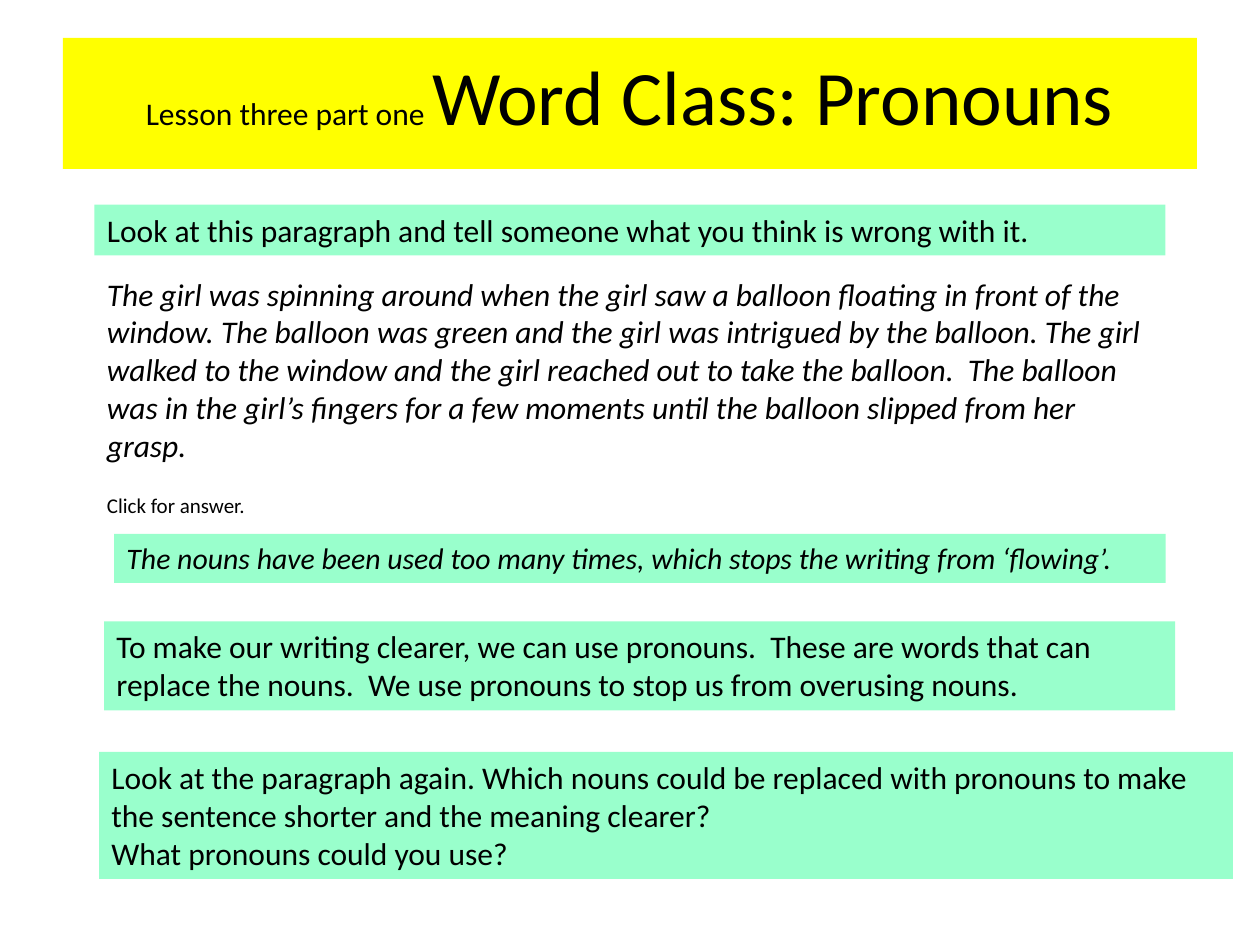
import pptx
import pptx.util
import pptx.dml.color
import pptx.enum.shapes
import pptx.enum.text
from dataclasses import dataclass

Pt = pptx.util.Pt
RGB = pptx.dml.color.RGBColor.from_string


@dataclass(frozen=True)
class Theme:
    font: str = "Calibri"
    ink: str = "000000"
    title: str = "FFFF00"
    mint: str = "99FFCC"
    head: int = 44
    body: int = 18
    note: int = 17
    small: int = 12


theme = Theme()
deck = pptx.Presentation()
deck.slide_width, deck.slide_height = Pt(720), Pt(540)
slide = deck.slides.add_slide(deck.slide_layouts[6])


def add_run(para, text, size, slant=False):
    run = para.add_run()
    run.text = text
    font = run.font
    font.name, font.size, font.italic = theme.font, Pt(size), slant
    font.color.rgb = RGB(theme.ink)


def add_box(place, fill=None):
    """Add a filled bar, or a plain text box when no fill is given."""
    place = [Pt(n) for n in place]
    if fill:
        kind = pptx.enum.shapes.MSO_SHAPE.RECTANGLE
        box = slide.shapes.add_shape(kind, *place)
        box.shadow.inherit = False
        box.fill.solid()
        box.fill.fore_color.rgb = RGB(fill)
        box.line.fill.background()
    else:
        box = slide.shapes.add_textbox(*place)
    frame = box.text_frame
    frame.word_wrap = True
    frame.vertical_anchor = pptx.enum.text.MSO_ANCHOR.TOP
    return frame


# Title bar
frame = add_box((36, 21.6, 648, 74.9), theme.title)
frame.margin_top = Pt(6)
para = frame.paragraphs[0]
para.alignment = pptx.enum.text.PP_ALIGN.CENTER
add_run(para, "Lesson three part one ", theme.body)
add_run(para, "Word Class: Pronouns", theme.head)

# Lesson steps: place, fill, size, italic, paragraphs
steps = [
    ((54, 277.9, 95, 21.6), None, theme.small, False,
     ["Click for answer."]),
    ((54, 116.9, 612, 29), theme.mint, theme.body, False,
     ["Look at this paragraph and tell someone what you think is wrong with it."]),
    ((54, 153.4, 612, 116.6), None, theme.body, True,
     ["The girl was spinning around when the girl saw a balloon floating in "
      "front of the window. The balloon was green and the girl was intrigued by "
      "the balloon. The girl walked to the window and the girl reached out to "
      "take the balloon.  The balloon was in the girl’s fingers for a few "
      "moments until the balloon slipped from her grasp."]),
    ((65.2, 305.1, 601, 28), theme.mint, theme.note, True,
     ["The nouns have been used too many times, which stops the writing from "
      "‘flowing’."]),
    ((59.5, 355, 612, 51), theme.mint, theme.body, False,
     ["To make our writing clearer, we can use pronouns.  These are words that "
      "can replace the nouns.  We use pronouns to stop us from overusing nouns."]),
    ((56.6, 429.6, 648, 72.7), theme.mint, theme.body, False,
     ["Look at the paragraph again. Which nouns could be replaced with pronouns "
      "to make the sentence shorter and the meaning clearer?",
      "What pronouns could you use?"]),
]
for place, fill, size, slant, texts in steps:
    frame = add_box(place, fill)
    frame.auto_size = pptx.enum.text.MSO_AUTO_SIZE.SHAPE_TO_FIT_TEXT
    for i, text in enumerate(texts):
        para = frame.add_paragraph() if i else frame.paragraphs[0]
        para.alignment = pptx.enum.text.PP_ALIGN.LEFT
        add_run(para, text, size, slant)

deck.save("out.pptx")
